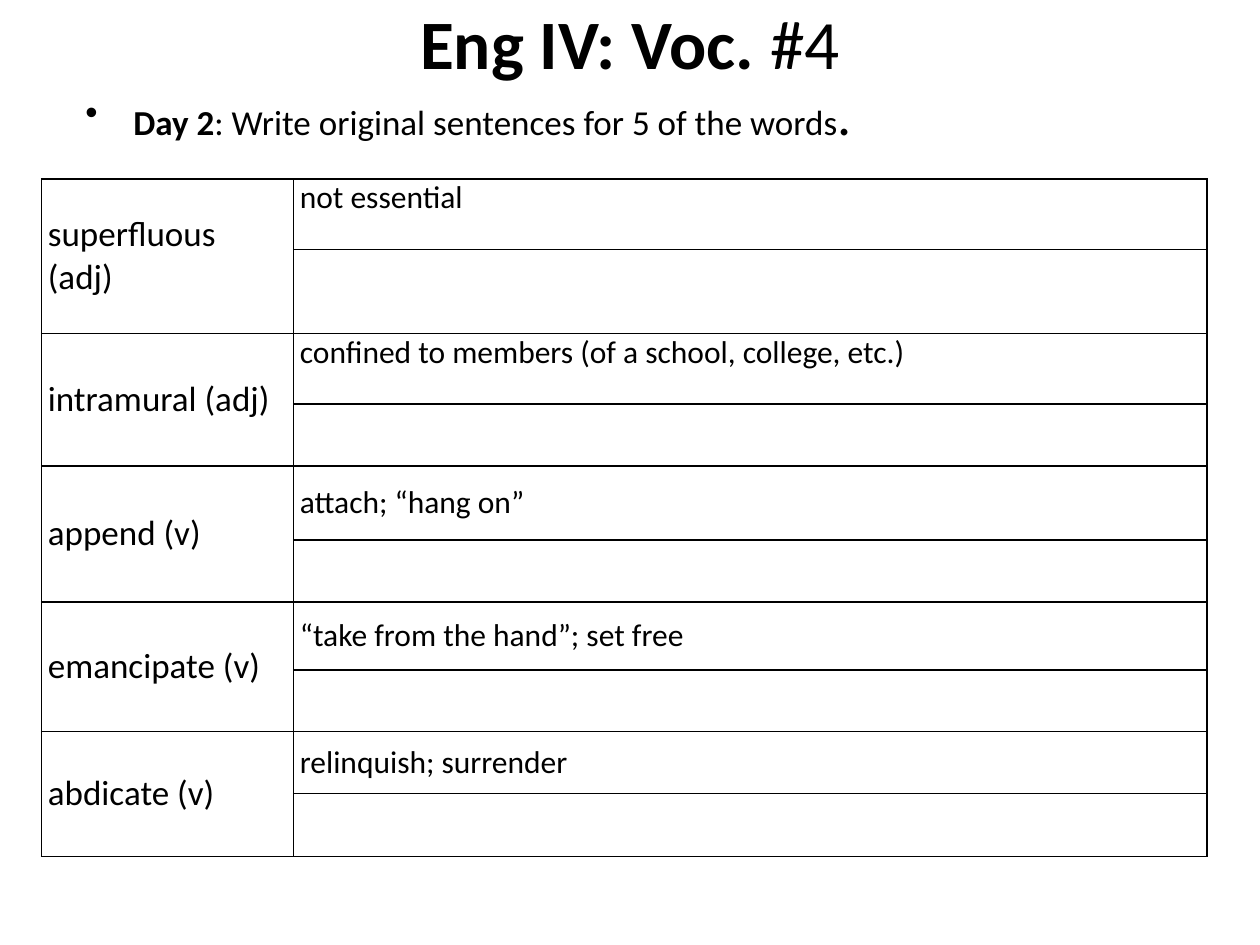
from typing import NamedTuple

from lxml.etree import SubElement
from pptx import Presentation
from pptx.dml.color import RGBColor
from pptx.enum.text import MSO_ANCHOR as Anchor, PP_ALIGN as Align
from pptx.oxml.ns import qn
from pptx.util import Inches, Pt

FONT = "Calibri"
BLACK = "000000"


class Word(NamedTuple):
    term: str
    meaning: str
    heights: tuple[float, float]
    anchor: Anchor = Anchor.MIDDLE


class Part(NamedTuple):
    text: str
    size: float
    bold: bool = False


WORDS = [
    Word("superfluous (adj)", "not essential", (0.56, 0.49), Anchor.TOP),
    Word("intramural (adj)", "confined to members (of a school, college, etc.)",
         (0.56, 0.49), Anchor.TOP),
    Word("append (v)", "attach; “hang on”", (0.59, 0.49)),
    Word("emancipate (v)", "“take from the hand”; set free", (0.54, 0.49)),
    Word("abdicate (v)", "relinquish; surrender", (0.49, 0.5)),
]


def set_color(target, color: str) -> None:
    target.rgb = RGBColor.from_string(color)


def add_text(s, left: float, top: float, width: float, height: float,
             parts: list[Part], anchor: Anchor = Anchor.TOP):
    """Add a one-paragraph text box and return its paragraph."""
    tf = s.shapes.add_textbox(Inches(left), Inches(top), Inches(width), Inches(height)).text_frame
    tf.word_wrap = True
    tf.vertical_anchor = anchor
    p = tf.paragraphs[0]
    p.font.name = FONT
    set_color(p.font.color, BLACK)
    for part in parts:
        r = p.add_run()
        r.text = part.text
        r.font.name = FONT
        r.font.size = Pt(part.size)
        r.font.bold = part.bold
        set_color(r.font.color, BLACK)
    return p


def add_bullet(p, indent: float) -> None:
    p_pr = p._p.get_or_add_pPr()
    p_pr.set("marL", str(Inches(indent)))
    p_pr.set("indent", str(-Inches(indent)))
    SubElement(p_pr, qn("a:buFont"), typeface="Arial")
    SubElement(p_pr, qn("a:buChar"), char="•")


def style_cell(cell) -> None:
    """Give a cell its margins, thin black borders and no fill."""
    cell.margin_left = cell.margin_right = Inches(0.05)
    cell.margin_top = cell.margin_bottom = 0
    tc_pr = cell._tc.get_or_add_tcPr()
    for side in ("lnL", "lnR", "lnT", "lnB"):
        line = SubElement(tc_pr, qn(f"a:{side}"), w=str(Pt(1)))
        SubElement(SubElement(line, qn("a:solidFill")), qn("a:srgbClr"), val=BLACK)
    cell.fill.background()


def fill_cell(cell, text: str, size: float, anchor: Anchor) -> None:
    cell.text = text
    cell.vertical_anchor = anchor
    font = cell.text_frame.paragraphs[0].runs[0].font
    font.name = FONT
    font.size = Pt(size)
    set_color(font.color, BLACK)


def add_word_table(s) -> None:
    heights = [height for word in WORDS for height in word.heights]
    table = s.shapes.add_table(len(heights), 2, Inches(0.33), Inches(1.42),
                               Inches(9.25), Inches(sum(heights))).table
    table.first_row = table.horz_banding = False
    for column, width in zip(table.columns, (2, 7.25)):
        column.width = Inches(width)
    for row, height in zip(table.rows, heights):
        row.height = Inches(height)
    for cell in table.iter_cells():
        style_cell(cell)
    for i, word in enumerate(WORDS):
        top = 2 * i
        term = table.cell(top, 0)
        term.merge(table.cell(top + 1, 0))
        fill_cell(term, word.term, 20, Anchor.MIDDLE)
        fill_cell(table.cell(top, 1), word.meaning, 18, word.anchor)


def main() -> None:
    prs = Presentation()
    prs.slide_width, prs.slide_height = Inches(10), Inches(7.5)
    s = prs.slides.add_slide(prs.slide_layouts[6])
    title = add_text(s, 0.5, 0, 9, 0.67,
                     [Part("Eng IV: Voc. ", 39.6, True), Part("#4", 39.6)], Anchor.MIDDLE)
    title.alignment = Align.CENTER
    task = add_text(s, 0.58, 0.58, 9, 0.58,
                    [Part("Day 2", 20, True),
                     Part(": Write original sentences for 5 of the words", 20),
                     Part(".", 32)])
    task.space_before = Pt(4)
    add_bullet(task, 0.38)
    add_word_table(s)
    prs.save("out.pptx")


if __name__ == "__main__":
    main()
